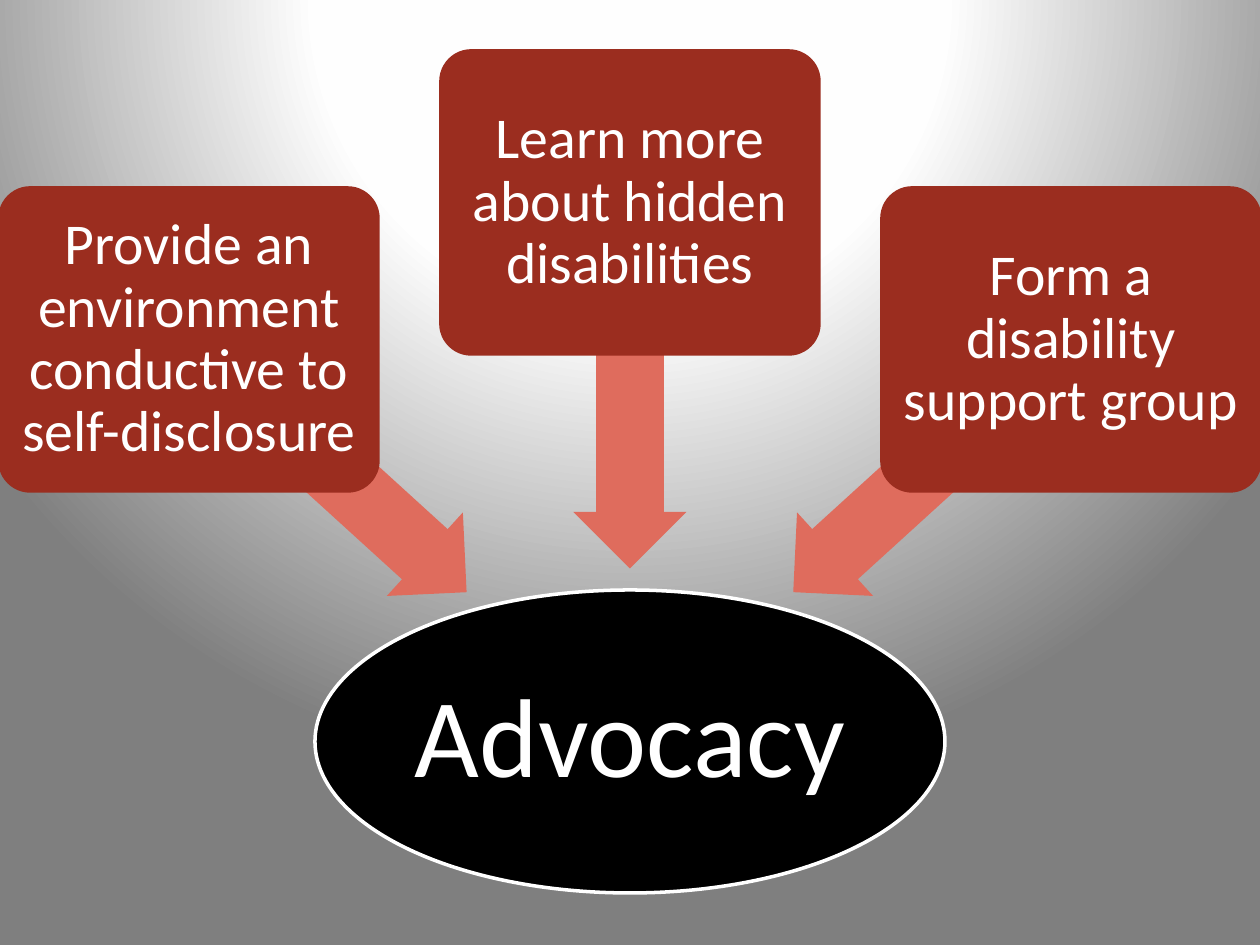
from lxml import etree
from pptx import Presentation
from pptx.dml.color import RGBColor
from pptx.enum.shapes import MSO_SHAPE
from pptx.enum.text import MSO_ANCHOR, PP_ALIGN
from pptx.oxml import parse_xml
from pptx.oxml.ns import nsdecls, qn
from pptx.util import Pt

ELLIPSE = MSO_SHAPE.OVAL
CARD = MSO_SHAPE.ROUNDED_RECTANGLE
ARROW = MSO_SHAPE.LEFT_ARROW
MIDDLE = MSO_ANCHOR.MIDDLE
CENTER = PP_ALIGN.CENTER

WHITE = RGBColor(0xFF, 0xFF, 0xFF)
NEAR_WHITE = RGBColor(0xFE, 0xFE, 0xFE)
GRAY = RGBColor(0x7F, 0x7F, 0x7F)
BLACK = RGBColor(0x00, 0x00, 0x00)
BRICK = RGBColor(0x9B, 0x2D, 0x1F)
CORAL = RGBColor(0xDF, 0x6C, 0x5D)

GOAL = "Advocacy"
ACTIONS = [
    {"text": "Provide an environment conductive to self-disclosure",
     "side": -1, "top": 188, "arrow_y": 466, "length": 375},
    {"text": "Learn more about hidden disabilities",
     "side": 0, "top": 51, "arrow_y": 386, "length": 365},
    {"text": "Form a disability support group",
     "side": 1, "top": 188, "arrow_y": 466, "length": 375},
]
BACKDROP_STOPS = [(0, WHITE), (40, NEAR_WHITE), (100, GRAY)]

PX = 914400 / 126
SLIDE_W, SLIDE_H = 1260, 945
MID_X = SLIDE_W // 2
CARD_W, CARD_H, CARD_STEP = 378, 303, 441
ARROW_H, ARROW_STEP, ARROW_TURN = 113, 302, 47.7
GOAL_W, GOAL_H, GOAL_TOP = 630, 303, 590


def px(value):
    return round(value * PX)


def add_backdrop(slide):
    stops = "".join(
        f'<a:gs pos="{position * 1000}"><a:srgbClr val="{color}"/></a:gs>'
        for position, color in BACKDROP_STOPS)
    backdrop = parse_xml(
        f'<p:bg {nsdecls("p", "a")}><p:bgPr><a:gradFill rotWithShape="1">'
        f'<a:gsLst>{stops}</a:gsLst><a:path path="circle">'
        '<a:fillToRect l="50000" t="-80000" r="50000" b="180000"/>'
        '</a:path></a:gradFill><a:effectLst/></p:bgPr></p:bg>')
    slide.element.find(qn("p:cSld")).insert(0, backdrop)


def add_figure(slide, kind, center_x, top, width, height, fill, line=None):
    figure = slide.shapes.add_shape(
        kind, px(center_x - width / 2), px(top), px(width), px(height))
    figure.shadow.inherit = False
    figure.fill.solid()
    figure.fill.fore_color.rgb = fill
    if line is None:
        figure.line.fill.background()
    else:
        figure.line.color.rgb = line
        figure.line.width = Pt(2)
    return figure


def add_label(figure, text, size, wrap=True):
    frame = figure.text_frame
    frame.word_wrap = wrap
    frame.vertical_anchor = MIDDLE
    frame.margin_left = frame.margin_right = 0
    frame.margin_top = frame.margin_bottom = 0
    para = frame.paragraphs[0]
    para.alignment = CENTER
    para.line_spacing = 0.9
    span = para.add_run()
    span.text = text
    span.font.name = "Calibri"
    span.font.size = Pt(size)
    span.font.color.rgb = WHITE


def add_action(slide, action):
    side = action["side"]
    arrow = add_figure(slide, ARROW, MID_X + side * ARROW_STEP,
                       action["arrow_y"] - ARROW_H / 2,
                       action["length"], ARROW_H, CORAL)
    arrow.adjustments[0] = 0.6
    arrow.adjustments[1] = 0.5
    arrow.rotation = 270 + side * ARROW_TURN
    card = add_figure(slide, CARD, MID_X + side * CARD_STEP, action["top"],
                      CARD_W, CARD_H, BRICK, BRICK)
    card.adjustments[0] = 0.1
    add_label(card, action["text"], 33)


def main():
    deck = Presentation()
    deck.slide_width, deck.slide_height = px(SLIDE_W), px(SLIDE_H)
    slide = deck.slides.add_slide(deck.slide_layouts[6])
    add_backdrop(slide)
    goal = add_figure(slide, ELLIPSE, MID_X, GOAL_TOP, GOAL_W, GOAL_H,
                      BLACK, WHITE)
    add_label(goal, GOAL, 64, wrap=False)
    for action in ACTIONS:
        add_action(slide, action)
    deck.save("out.pptx")


if __name__ == "__main__":
    main()
